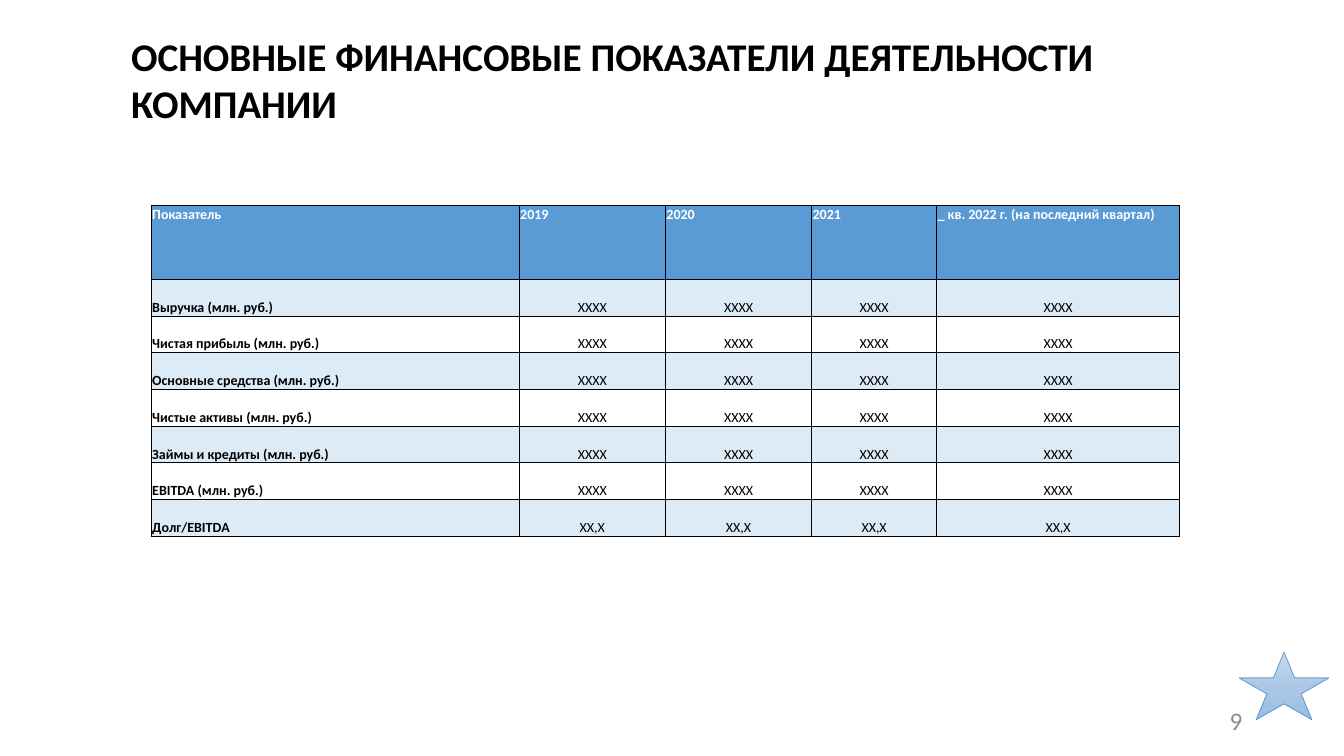
from copy import deepcopy
from dataclasses import dataclass

from lxml import etree
from pptx import Presentation
from pptx import util as u
from pptx.dml.color import RGBColor
from pptx.enum import shapes, text
from pptx.oxml import ns

PX = 9144  # EMU per px, 100 px to the inch


@dataclass(frozen=True)
class Theme:
    font: str = "Calibri"
    ink: str = "000000"
    header_ink: str = "FFFFFF"
    page_ink: str = "8C8C8C"
    accent: str = "5B9BD5"
    band: str = "DDEBF7"
    star_stops: tuple[tuple[float, str], ...] = (
        (0, "C7D9EE"), (0.5, "ADC7E7"), (1, "9ABDE5"))
    title_pt: int = 28
    page_pt: int = 18
    table_pt: int = 10
    line_pt: float = 0.5


@dataclass(frozen=True)
class Box:
    left: int
    top: int
    width: int
    height: int

    def emu(self) -> tuple[int, int, int, int]:
        return self.left * PX, self.top * PX, self.width * PX, self.height * PX


@dataclass(frozen=True)
class Indicator:
    name: str
    value: str = "ХХХХ"


THEME = Theme()
TITLE = "ОСНОВНЫЕ ФИНАНСОВЫЕ ПОКАЗАТЕЛИ ДЕЯТЕЛЬНОСТИ КОМПАНИИ"
TITLE_BOX = Box(120, 44, 1154, 70)
PAGE_BOX = Box(942, 695, 300, 40)
STAR_BOX = Box(1229, 647, 89, 67)
TABLE_BOX = Box(150, 204, 1020, 328)
HEADER_HEIGHT = 73
COLUMN_WIDTHS = (365, 145, 145, 124, 241)
HEADINGS = ("Показатель", "2019", "2020", "2021",
            "_ кв. 2022 г. (на последний квартал)")
INDICATORS = (
    Indicator("Выручка (млн. руб.)"),
    Indicator("Чистая прибыль (млн. руб.)"),
    Indicator("Основные средства (млн. руб.)"),
    Indicator("Чистые активы (млн. руб.)"),
    Indicator("Займы и кредиты (млн. руб.)"),
    Indicator("EBITDA (млн. руб.)"),
    Indicator("Долг/ЕВITDА", "ХХ,Х"),
)


def write(frame, words: str, size: int, color: str, align, bold: bool = False) -> None:
    frame.text = words
    frame.word_wrap = True
    paragraph = frame.paragraphs[0]
    paragraph.alignment = align
    font = paragraph.runs[0].font
    font.name, font.size, font.bold = THEME.font, u.Pt(size), bold
    font.color.rgb = RGBColor.from_string(color)


def add_borders(cell) -> None:
    properties = cell._tc.get_or_add_tcPr()
    for position, side in enumerate(("lnL", "lnR", "lnT", "lnB")):
        line = etree.Element(ns.qn(f"a:{side}"), w=str(u.Pt(THEME.line_pt)))
        fill = etree.SubElement(line, ns.qn("a:solidFill"))
        etree.SubElement(fill, ns.qn("a:srgbClr"), val=THEME.ink)
        properties.insert(position, line)


def fill_cell(cell, words: str, row: int, column: int) -> None:
    header = row == 0
    centred = not header and column > 0
    cell.margin_left = cell.margin_right = cell.margin_top = PX
    cell.margin_bottom = 0
    cell.vertical_anchor = text.MSO_ANCHOR.TOP if header else text.MSO_ANCHOR.BOTTOM
    write(cell.text_frame, words, THEME.table_pt,
          THEME.header_ink if header else THEME.ink,
          text.PP_ALIGN.CENTER if centred else text.PP_ALIGN.LEFT, not centred)
    if header or row % 2:
        cell.fill.solid()
        cell.fill.fore_color.rgb = RGBColor.from_string(
            THEME.accent if header else THEME.band)
    else:
        cell.fill.background()
    add_borders(cell)


def add_indicators(slide) -> None:
    rows = [HEADINGS] + [
        (item.name, *[item.value] * (len(HEADINGS) - 1)) for item in INDICATORS]
    table = slide.shapes.add_table(
        len(rows), len(HEADINGS), *TABLE_BOX.emu()).table
    table.first_row = table.horz_banding = False
    for column, width in zip(table.columns, COLUMN_WIDTHS):
        column.width = width * PX
    body_height = (TABLE_BOX.height - HEADER_HEIGHT) * PX // len(INDICATORS)
    for r, words in enumerate(rows):
        table.rows[r].height = body_height if r else HEADER_HEIGHT * PX
        for c, word in enumerate(words):
            fill_cell(table.cell(r, c), word, r, c)


def add_star(slide) -> None:
    star = slide.shapes.add_shape(
        shapes.MSO_SHAPE.STAR_5_POINT, *STAR_BOX.emu())
    star.shadow.inherit = False
    star.line.color.rgb = RGBColor.from_string(THEME.accent)
    star.line.width = u.Pt(THEME.line_pt)
    star.fill.gradient()
    star.fill.gradient_angle = 270
    # A middle stop joins the two default ones
    stops = star._element.spPr.find(ns.qn("a:gradFill")).find(ns.qn("a:gsLst"))
    stops.insert(1, deepcopy(stops[0]))
    for stop, (position, color) in zip(star.fill.gradient_stops, THEME.star_stops):
        stop.position = position
        stop.color.rgb = RGBColor.from_string(color)


def add_title(slide) -> None:
    title = slide.shapes.title
    title.left, title.top, title.width, title.height = TITLE_BOX.emu()
    write(title.text_frame, TITLE, THEME.title_pt, THEME.ink,
          text.PP_ALIGN.LEFT, True)
    title.text_frame.auto_size = text.MSO_AUTO_SIZE.NONE
    title.text_frame.vertical_anchor = text.MSO_ANCHOR.MIDDLE


def add_page_number(slide) -> None:
    page = slide.shapes.add_textbox(*PAGE_BOX.emu()).text_frame
    write(page, "9", THEME.page_pt, THEME.page_ink, text.PP_ALIGN.RIGHT)
    page.vertical_anchor = text.MSO_ANCHOR.MIDDLE


def main() -> None:
    deck = Presentation()
    deck.slide_width, deck.slide_height = 1333 * PX, 750 * PX
    slide = deck.slides.add_slide(deck.slide_layouts.get_by_name("Title Only"))
    add_page_number(slide)
    add_title(slide)
    add_star(slide)
    add_indicators(slide)
    deck.save("out.pptx")


if __name__ == "__main__":
    main()
